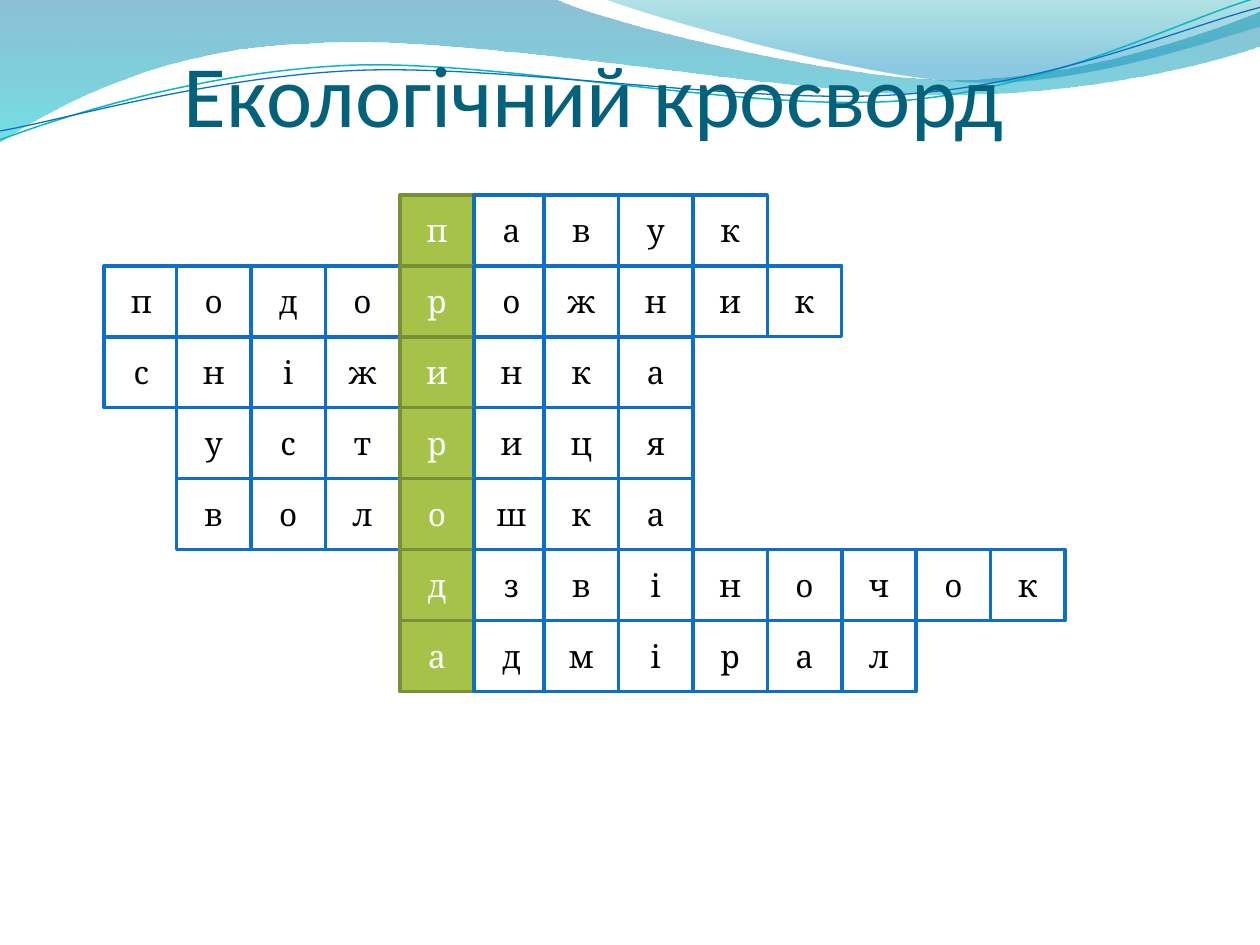
from dataclasses import dataclass
from itertools import accumulate

from lxml import etree
from pptx import Presentation
from pptx import util as u
from pptx.dml.color import RGBColor
from pptx.enum import shapes, text
from pptx.oxml.ns import qn


@dataclass(frozen=True)
class Theme:
    title: str = "04617B"
    ink: str = "000000"
    paper: str = "FFFFFF"
    grid: str = "0F6FC6"
    key_fill: str = "A5C249"
    key_line: str = "7A9036"
    teal_line: str = "0AB8BF"
    # gradient stops: position, colour, opacity in percent
    wide_wave: tuple = ((0, "0074A1", 45), (100, "00C6CF", 55))
    small_wave: tuple = ((0, "00A1A9", 30), (80, "008BBF", 45))
    title_font: str = "Calibri"
    body_font: str = "Cambria"
    title_size: float = 50
    body_size: float = 18


# Outlines in cm: a pair is a straight step, six numbers are a Bézier curve.
WIDE_WAVE = [
    (0, 0), (11.18, -0.03),
    (12.09, 0.43, 16.87, 1.6, 19.25, 1.6), (21.67, 1.6, 24.33, 0.66, 25.4, 0.23),
    (25.43, 0.91),
    (24.97, 1.12, 22.1, 1.93, 18.95, 1.91), (15.8, 1.91, 9.7, 0.71, 6.53, 0.86),
    (3.28, 0.91, 1.17, 2.11, -0.03, 2.87),
]
SMALL_WAVE = [
    (12.17, -0.03),
    (12.93, 0.28, 17.32, 1.57, 19.53, 1.65), (21.74, 1.75, 24.41, 0.81, 25.4, 0.53),
    (25.4, 0),
]
# The two thin curves are given level and then tilted.
TEAL_CURVE = [
    (-0.05, 2.22),
    (1.19, 1.82, 4.02, 1.04, 7.05, 1.05), (10.05, 1.07, 15.02, 2.37, 18.08, 2.29),
    (21.13, 2.2, 23.87, 0.91, 25.41, 0.55),
]
BLUE_CURVE = [
    (-0.04, 2.04),
    (1.16, 1.9, 4.18, 1.15, 7.2, 1.16), (10.25, 1.18, 15.13, 2.25, 18.19, 2.16),
    (21.21, 2.1, 23.93, 1.06, 25.45, 0.75),
]
TILT = -2.7

# Each word with the column of its first letter.
WORDS = [
    ("павук", 4), ("подорожник", 0), ("сніжинка", 0), ("устриця", 1),
    ("волошка", 1), ("дзвіночок", 4), ("адмірал", 4),
]
KEY_COLUMN = 4
CELL_W, CELL_H = 1.5, 1.43
GRID_TOP = 3.93
COLUMNS = list(accumulate([2.1, 1.46] + [CELL_W] * 4 + [1.41] + [CELL_W] * 6))


def write(shape, content, *, font, size, color, align=text.PP_ALIGN.LEFT,
          anchor=text.MSO_ANCHOR.MIDDLE, insets=None):
    tf = shape.text_frame
    tf.word_wrap = True
    tf.vertical_anchor = anchor
    if insets:
        tf.margin_left, tf.margin_top, tf.margin_right, tf.margin_bottom = map(u.Cm, insets)
    p = tf.paragraphs[0]
    p.alignment = align
    r = p.add_run()
    r.text = content
    r.font.name = font
    r.font.size = u.Pt(size)
    r.font.color.rgb = RGBColor.from_string(color)


def bend(sp, parts):
    """Turn the straight steps that stand for Bézier parts into real curves."""
    steps = list(sp.element.spPr.iter(qn("a:lnTo")))
    for step, part in zip(steps, parts[1:]):
        if len(part) == 2:
            continue
        step.tag = qn("a:cubicBezTo")
        for node in list(step):
            step.remove(node)
        for x, y in zip(part[::2], part[1::2]):
            pt = etree.SubElement(step, qn("a:pt"))
            pt.set("x", str(u.Cm(x) - sp.left))
            pt.set("y", str(u.Cm(y) - sp.top))


class Deck:
    def __init__(self, theme):
        self.theme = theme
        self.prs = Presentation()
        self.prs.slide_width, self.prs.slide_height = u.Cm(25.4), u.Cm(19.05)
        self.slide = self.prs.slides.add_slide(self.prs.slide_layouts[6])

    def group(self):
        return self.slide.shapes.add_group_shape()

    def outline(self, parent, parts, close):
        points = [(u.Cm(part[-2]), u.Cm(part[-1])) for part in parts]
        builder = parent.shapes.build_freeform(*points[0])
        builder.add_line_segments(points[1:], close=close)
        sp = builder.convert_to_shape()
        bend(sp, parts)
        sp.shadow.inherit = False
        return sp

    def wave(self, parts, stops):
        sp = self.outline(self.slide, parts, close=True)
        sp.line.fill.background()
        sp.fill.gradient()
        sp.fill.gradient_angle = 270
        for stop, (position, color, _) in zip(sp.fill.gradient_stops, stops):
            stop.position = position / 100
            stop.color.rgb = RGBColor.from_string(color)
        colors = list(sp.element.spPr.iter(qn("a:srgbClr")))
        for node, (_, _, opacity) in zip(colors, stops):
            etree.SubElement(node, qn("a:alpha")).set("val", str(opacity * 1000))

    def curve(self, group, parts, color, width):
        sp = self.outline(group, parts, close=False)
        sp.rotation = TILT
        sp.fill.background()
        sp.line.color.rgb = RGBColor.from_string(color)
        sp.line.width = u.Pt(width)

    def title(self, content, left, top, width, height):
        box = self.slide.shapes.add_textbox(*map(u.Cm, (left, top, width, height)))
        write(box, content, font=self.theme.title_font, size=self.theme.title_size,
              color=self.theme.title, anchor=text.MSO_ANCHOR.BOTTOM, insets=(0, 0.13, 0, 0))

    def cell(self, group, letter, left, top, is_key):
        t = self.theme
        fill, line, ink = ((t.key_fill, t.key_line, t.paper) if is_key
                           else (t.paper, t.grid, t.ink))
        sp = group.shapes.add_shape(shapes.MSO_SHAPE.RECTANGLE,
                                    *map(u.Cm, (left, top, CELL_W, CELL_H)))
        sp.shadow.inherit = False
        sp.fill.solid()
        sp.fill.fore_color.rgb = RGBColor.from_string(fill)
        sp.line.color.rgb = RGBColor.from_string(line)
        sp.line.width = u.Pt(2)
        write(sp, letter, font=t.body_font, size=t.body_size, color=ink,
              align=text.PP_ALIGN.CENTER)

    def crossword(self):
        group = self.group()
        for row, (word, start) in enumerate(WORDS):
            for column, letter in enumerate(word, start):
                self.cell(group, letter, COLUMNS[column], GRID_TOP + row * CELL_H,
                          column == KEY_COLUMN)


def main():
    theme = Theme()
    deck = Deck(theme)
    deck.wave(WIDE_WAVE, theme.wide_wave)
    deck.wave(SMALL_WAVE, theme.small_wave)
    curves = deck.group()
    deck.curve(curves, TEAL_CURVE, theme.teal_line, 0.85)
    deck.curve(curves, BLUE_CURVE, theme.grid, 0.75)
    deck.title("Екологічний кросворд", 3.71, 0.53, 19.25, 2.39)
    deck.crossword()
    deck.prs.save("out.pptx")


if __name__ == "__main__":
    main()
